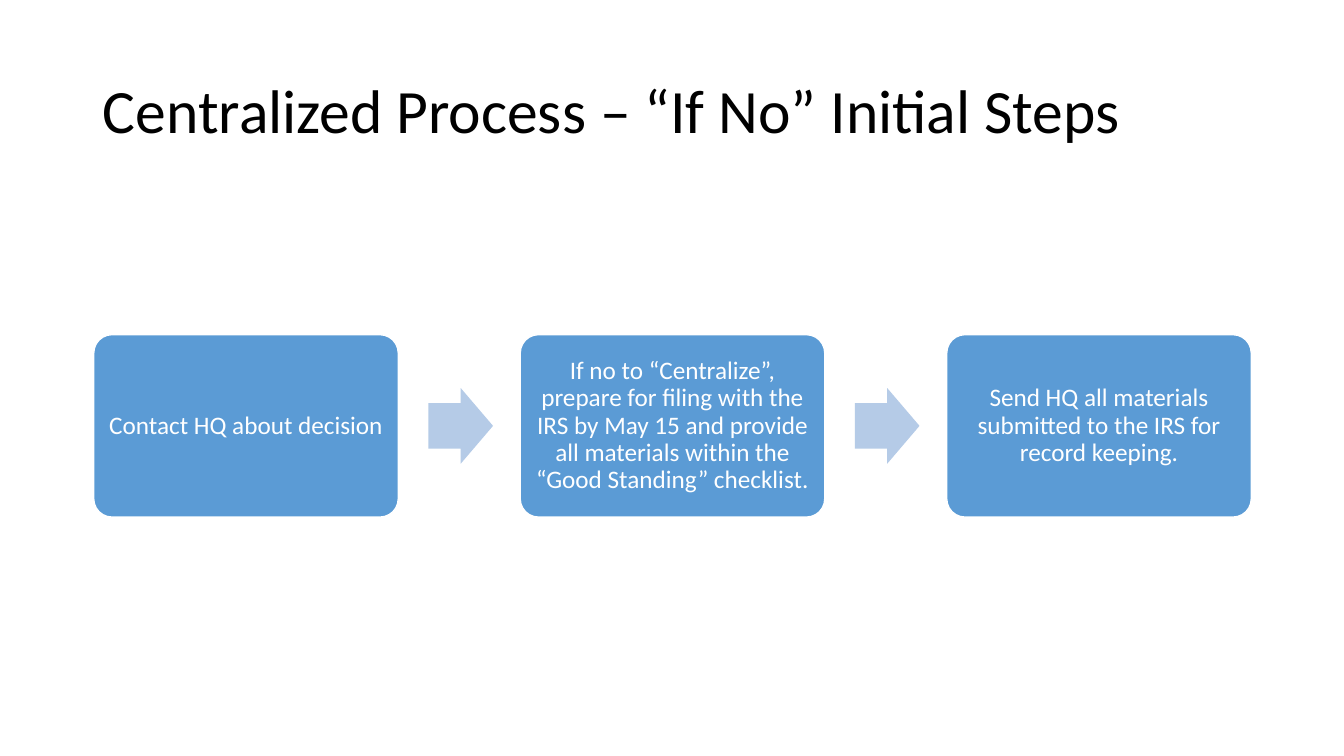
from pptx import Presentation
from pptx.dml.color import RGBColor
from pptx.enum.shapes import MSO_SHAPE
from pptx.enum.text import MSO_ANCHOR, PP_ALIGN
from pptx.util import Pt

PX = 9144
BLUE = RGBColor(0x5B, 0x9B, 0xD5)
PALE = RGBColor(0xB5, 0xCB, 0xE7)
WHITE = RGBColor(0xFF, 0xFF, 0xFF)
BLACK = RGBColor(0, 0, 0)
STEPS = [
    "Contact HQ about decision",
    "If no to “Centralize”, prepare for filing with the IRS by May 15 "
    "and provide all materials within the “Good Standing” checklist.",
    "Send HQ all materials submitted to the IRS for record keeping.",
]
LEFT, TOP, WIDE, HIGH, PITCH = 93, 332, 302, 181, 423


def write(shape, text, size, color, align, inset):
    frame = shape.text_frame
    frame.text = text
    form = {
        "word_wrap": True,
        "vertical_anchor": MSO_ANCHOR.MIDDLE,
        "margin_left": inset * PX,
        "margin_right": inset * PX,
        "margin_top": inset * PX,
        "margin_bottom": inset * PX,
    }
    for key, value in form.items():
        setattr(frame, key, value)
    para = frame.paragraphs[0]
    para.alignment = align
    para.line_spacing = 0.9
    font = para.runs[0].font
    for key, value in {"name": "Calibri", "size": Pt(size)}.items():
        setattr(font, key, value)
    font.color.rgb = color


def draw(slide, kind, box, fill, adjust):
    shape = slide.shapes.add_shape(kind, *[n * PX for n in box])
    shape.shadow.inherit = False
    shape.fill.solid()
    shape.fill.fore_color.rgb = fill
    for i, value in enumerate(adjust):
        shape.adjustments[i] = value
    return shape


deck = Presentation()
deck.slide_width = 1333 * PX
deck.slide_height = 750 * PX
slide = deck.slides.add_slide(deck.slide_layouts[5])

title = slide.shapes.title
place = {"left": 92, "top": 40, "width": 1150, "height": 145}
for key, value in place.items():
    setattr(title, key, value * PX)
write(title, "Centralized Process – “If No” Initial Steps", 44, BLACK,
      PP_ALIGN.LEFT, 10)

for i, text in enumerate(STEPS):
    left = LEFT + i * PITCH
    if i:
        arrow = draw(slide, MSO_SHAPE.RIGHT_ARROW, (left - 91, 385, 64, 75),
                     PALE, (0.6, 0.5))
        arrow.line.fill.background()
    card = draw(slide, MSO_SHAPE.ROUNDED_RECTANGLE, (left, TOP, WIDE, HIGH),
                BLUE, (0.1,))
    card.line.color.rgb = WHITE
    card.line.width = Pt(1)
    write(card, text, 18, WHITE, PP_ALIGN.CENTER, 7)

deck.save("out.pptx")
